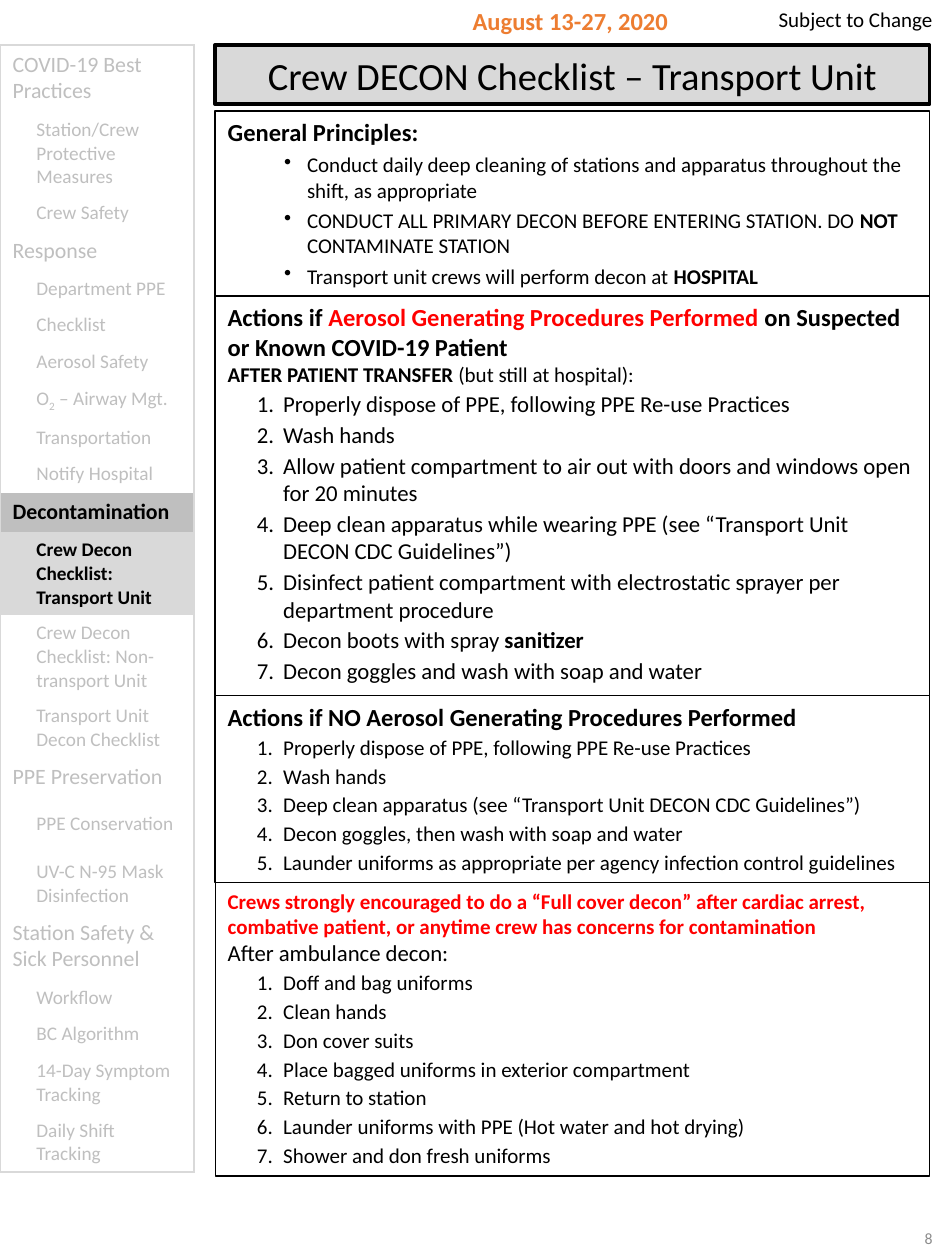
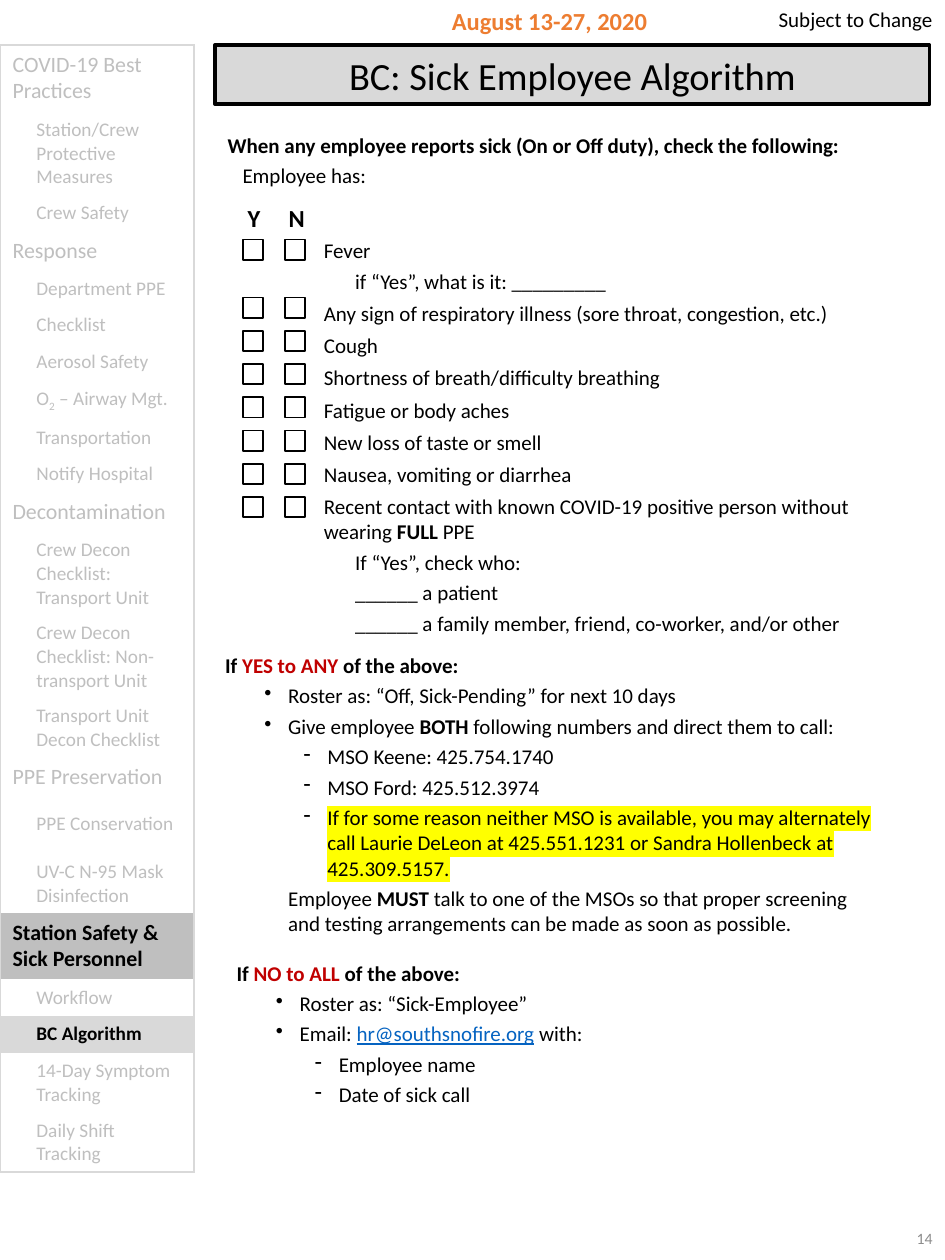
import dataclasses

import lxml.etree
import pptx
import pptx.dml.color
import pptx.enum.shapes
import pptx.enum.text
import pptx.oxml.ns
import pptx.util
from pptx.util import Cm

ALIGN = pptx.enum.text.PP_ALIGN
ANCHOR = pptx.enum.text.MSO_ANCHOR
qn = pptx.oxml.ns.qn

# Shared look
FONT = "Calibri"
BLACK, ORANGE, PAGE_GREY = "000000", "ED7D31", "8C8C8C"
MUTED, SECTION_FILL, TOPIC_FILL = "BFBFBF", "BFBFBF", "D9D9D9"
RED, DARK_RED, LINK_BLUE, YELLOW = "FF0000", "C00000", "0563C1", "FFFF00"
NO_TABLE_STYLE = "{2D5ABB26-0587-4C30-8999-92F81FD0307C}"
MAIN_LEFT, MAIN_WIDTH = 4.34, 14.4

STYLES = {
    "plain": {},
    "bold": {"bold": True},
    "alert": {"bold": True, "color": RED},
    "answer": {"bold": True, "color": DARK_RED},
    "link": {"color": LINK_BLUE, "underline": True},
    "marked": {"highlight": YELLOW},
    "sub": {"baseline": "-25000"},
}

# Side menu: kind, text, row height in cm
MENU = [
    ("section", "COVID-19 Best Practices", 1.34),
    ("topic", "Station/Crew Protective Measures", 1.67),
    ("topic", "Crew Safety", 0.74),
    ("section", "Response", 0.79),
    ("topic", "Department PPE", 0.74),
    ("topic", "Checklist", 0.74),
    ("topic", "Aerosol Safety", 0.74),
    ("topic", ["O", ("2", "sub"), " – Airway Mgt."], 0.74),
    ("topic", "Transportation", 0.74),
    ("topic", "Notify Hospital", 0.74),
    ("section", "Decontamination", 0.79),
    ("topic", "Crew Decon Checklist: Transport Unit", 1.67),
    ("topic", "Crew Decon Checklist: Non-transport Unit", 1.67),
    ("topic", "Transport Unit Decon Checklist", 1.2),
    ("section", "PPE Preservation", 0.97),
    ("topic", "PPE Conservation", 0.97),
    ("topic", "UV-C N-95 Mask Disinfection", 1.2),
    ("section", "Station Safety & Sick Personnel", 1.34),
    ("topic", "Workflow", 0.74),
    ("topic", "BC Algorithm", 0.74),
    ("topic", "14-Day Symptom Tracking", 1.2),
    ("topic", "Daily Shift Tracking", 1.2),
]


@dataclasses.dataclass
class Line:
    """One paragraph; spans are strings or (text, style) pairs."""
    spans: object
    size: float = 12
    left: float = 0
    hang: float = 0
    before: float = 0
    bullet: str = ""
    color: str = BLACK
    bold: bool = False
    align: object = ALIGN.LEFT


def heading(spans, size=14):
    return Line(spans, size, bold=True)


def numbered(items, size=12):
    return [Line(item, size, 1.12, 0.53, 2, "1.") for item in items]


def dotted(items, left=1.27, hang=0.48):
    return [Line(item, 12, left, hang, 3, "•") for item in items]


def dashed(items):
    return [Line(item, 12, 2.06, 0.48, 3, "-") for item in items]


def indented(items, left, before=3):
    return [Line(item, 12, left, 0, before) for item in items]


def rgb(color):
    return pptx.dml.color.RGBColor.from_string(color)


# Text
def format_span(span, line, style):
    font = span.font
    font.name, font.size = FONT, pptx.util.Pt(line.size)
    font.bold = style.get("bold", line.bold)
    font.color.rgb = rgb(style.get("color", line.color))
    if "underline" in style:
        font.underline = True
    properties = span._r.get_or_add_rPr()
    if "baseline" in style:
        properties.set("baseline", style["baseline"])
    if "highlight" in style:
        highlight = lxml.etree.Element(qn("a:highlight"))
        lxml.etree.SubElement(highlight, qn("a:srgbClr"), val=style["highlight"])
        properties.find(qn("a:solidFill")).addnext(highlight)


def write_lines(frame, lines):
    frame.word_wrap = True
    for index, line in enumerate(lines):
        para = frame.add_paragraph() if index else frame.paragraphs[0]
        para.alignment = line.align
        para.space_before = pptx.util.Pt(line.before)
        properties = para._p.get_or_add_pPr()
        properties.set("marL", str(Cm(line.left)))
        properties.set("indent", str(-Cm(line.hang)))
        if line.bullet == "1.":
            lxml.etree.SubElement(properties, qn("a:buAutoNum"), type="arabicPeriod")
        elif line.bullet:
            lxml.etree.SubElement(properties, qn("a:buChar"), char=line.bullet)
        spans = [line.spans] if isinstance(line.spans, str) else line.spans
        for part in spans:
            text, style = (part, "plain") if isinstance(part, str) else part
            span = para.add_run()
            span.text = text
            format_span(span, line, STYLES[style])


def add_text(page, left, top, width, height, lines, anchor=ANCHOR.TOP):
    box = page.shapes.add_textbox(Cm(left), Cm(top), Cm(width), Cm(height))
    box.text_frame.vertical_anchor = anchor
    write_lines(box.text_frame, lines)


# Shapes
def add_frame(page, left, top, width, height, line_width, lines=(), fill=None):
    box = page.shapes.add_shape(pptx.enum.shapes.MSO_SHAPE.RECTANGLE,
                                Cm(left), Cm(top), Cm(width), Cm(height))
    box.shadow.inherit = False
    if fill:
        box.fill.solid()
        box.fill.fore_color.rgb = rgb(fill)
    else:
        box.fill.background()
    box.line.color.rgb = rgb(BLACK)
    box.line.width = pptx.util.Pt(line_width)
    box.text_frame.vertical_anchor = ANCHOR.MIDDLE if fill else ANCHOR.TOP
    write_lines(box.text_frame, lines)


# Side menu
def add_border(cell, side):
    border = lxml.etree.SubElement(cell._tc.get_or_add_tcPr(), qn("a:ln" + side), w="12700")
    fill = lxml.etree.SubElement(border, qn("a:solidFill"))
    lxml.etree.SubElement(fill, qn("a:srgbClr"), val=TOPIC_FILL)


def add_menu(page, current):
    total = sum(height for _, _, height in MENU)
    table = page.shapes.add_table(len(MENU), 1, Cm(0), Cm(0.91), Cm(3.91), Cm(total)).table
    table.first_row = table.horz_banding = False
    table._tbl.tblPr.find(qn("a:tableStyleId")).text = NO_TABLE_STYLE
    for index, (kind, text, height) in enumerate(MENU):
        table.rows[index].height = Cm(height)
        cell = table.cell(index, 0)
        sides = ["L", "R"]
        if index == 0:
            sides.append("T")
        if index == len(MENU) - 1:
            sides.append("B")
        for side in sides:
            add_border(cell, side)
        is_section, active = kind == "section", text in current
        if active:
            cell.fill.solid()
            cell.fill.fore_color.rgb = rgb(SECTION_FILL if is_section else TOPIC_FILL)
        else:
            cell.fill.background()
        write_lines(cell.text_frame, [Line(
            text, 12.5 if is_section else 11, 0 if is_section else 0.48,
            color=BLACK if active else MUTED, bold=active)])


def add_page(deck, title, number, current, date_left):
    page = deck.slides.add_slide(deck.slide_layouts[6])
    add_text(page, date_left, 0, 6.5, 0.84,
             [Line("August 13-27, 2020", 14, color=ORANGE, bold=True, align=ALIGN.CENTER)])
    add_text(page, 14.76, 0, 4.29, 0.76, [Line("Subject to Change", align=ALIGN.RIGHT)])
    add_text(page, 14.76, 24.28, 4.29, 1.35,
             [Line(number, 9, color=PAGE_GREY, align=ALIGN.RIGHT)], ANCHOR.MIDDLE)
    add_menu(page, current)
    add_frame(page, MAIN_LEFT, 0.91, MAIN_WIDTH, 1.19, 2.25,
              [Line(title, 22, align=ALIGN.CENTER)], TOPIC_FILL)
    return page


# Slide: decontamination checklist
def build_checklist(deck):
    page = add_page(deck, "Crew DECON Checklist – Transport Unit", "8",
                    ("Decontamination", "Crew Decon Checklist: Transport Unit"), 8.25)
    principles = [heading("General Principles:")] + dotted([
        "Conduct daily deep cleaning of stations and apparatus throughout the shift, as appropriate",
        ["CONDUCT ALL PRIMARY DECON BEFORE ENTERING STATION. DO ", ("NOT", "bold"),
         " CONTAMINATE STATION"],
        ["Transport unit crews will perform decon at ", ("HOSPITAL", "bold")],
    ], 1.6, 0.46)
    aerosol = [
        heading(["Actions if ", ("Aerosol Generating Procedures Performed ", "alert"),
                 "on Suspected or Known COVID-19 Patient"]),
        Line([("AFTER PATIENT TRANSFER ", "bold"), "(but still at hospital):"]),
    ] + numbered([
        "Properly dispose of PPE, following PPE Re-use Practices",
        "Wash hands",
        "Allow patient compartment to air out with doors and windows open for 20 minutes",
        "Deep clean apparatus while wearing PPE (see “Transport Unit DECON CDC Guidelines”)",
        "Disinfect patient compartment with electrostatic sprayer per department procedure",
        ["Decon boots with spray ", ("sanitizer", "bold")],
        "Decon goggles and wash with soap and water",
    ], 13)
    no_aerosol = [heading("Actions if NO Aerosol Generating Procedures Performed")] + numbered([
        "Properly dispose of PPE, following PPE Re-use Practices",
        "Wash hands",
        "Deep clean apparatus (see “Transport Unit DECON CDC Guidelines”)",
        "Decon goggles, then wash with soap and water",
        "Launder uniforms as appropriate per agency infection control guidelines",
    ])
    full_decon = [
        Line([("Crews strongly encouraged to do a “Full cover decon” after cardiac arrest, "
               "combative patient, or anytime crew has concerns for contamination", "alert")]),
        Line("After ambulance decon:", 13),
    ] + numbered([
        "Doff and bag uniforms",
        "Clean hands",
        "Don cover suits",
        "Place bagged uniforms in exterior compartment",
        "Return to station",
        "Launder uniforms with PPE (Hot water and hot drying)",
        "Shower and don fresh uniforms",
    ])
    top = 2.24
    for height, line_width, lines in [(3.73, 1, principles), (8.05, 1, aerosol),
                                      (3.77, 1, no_aerosol), (5.92, 0.75, full_decon)]:
        add_frame(page, MAIN_LEFT, top, MAIN_WIDTH, height, line_width, lines)
        top += height


# Slide: sick employee algorithm
def build_algorithm(deck):
    page = add_page(deck, "BC: Sick Employee Algorithm", "14",
                    ("Station Safety & Sick Personnel", "BC Algorithm"), 7.83)
    add_text(page, MAIN_LEFT, 2.54, 13.18, 1.4, [
        heading("When any employee reports sick (On or Off duty), check the following:", 12),
        *indented(["Employee has:"], 0.3)])

    symptoms = [
        Line("Fever", left=0.97),
        *indented(["if “Yes”, what is it: _________"], 1.6),
        *indented([
            "Any sign of respiratory illness (sore throat, congestion, etc.)",
            "Cough",
            "Shortness of breath/difficulty breathing",
            "Fatigue or body aches",
            "New loss of taste or smell",
            "Nausea, vomiting or diarrhea",
            ["Recent contact with known COVID-19 positive person without wearing ",
             ("FULL ", "bold"), "PPE"],
        ], 0.97, 4),
        *indented(["If “Yes”, check who:", "______ a patient",
                   "______ a family member, friend, co-worker, and/or other"], 1.6),
    ]
    add_text(page, 5.31, 4.67, 13.44, 8.36, symptoms)

    # Yes and no check boxes
    box_tops = [4.83] + [6 + 0.67 * row for row in range(7)]
    for letter, letter_left, box_left in [("Y", 4.65, 4.9), ("N", 5.51, 5.74)]:
        add_text(page, letter_left, 3.97, 0.94, 0.86,
                 [Line(letter, 14, bold=True, align=ALIGN.CENTER)])
        for box_top in box_tops:
            add_frame(page, box_left, box_top, 0.41, 0.41, 1)

    add_text(page, 4.29, 13.03, 13.61, 6.65, [
        heading(["If ", ("YES to ANY ", "answer"), "of the above:"], 12),
        *dotted(["Roster as: “Off, Sick-Pending” for next 10 days",
                 ["Give employee ", ("BOTH", "bold"),
                  " following numbers and direct them to call:"]]),
        *dashed(["MSO Keene: 425.754.1740", "MSO Ford: 425.512.3974",
                 [("If for some reason neither MSO is available, you may alternately call Laurie "
                   "DeLeon at 425.551.1231 or Sandra Hollenbeck at 425.309.5157.", "marked")]]),
        *indented([["Employee ", ("MUST", "bold"),
                    " talk to one of the MSOs so that proper screening and testing "
                    "arrangements can be made as soon as possible."]], 1.27)])
    add_text(page, 4.52, 19.23, 13.18, 3.76, [
        heading(["If ", ("NO to ALL ", "answer"), "of the above:"], 12),
        *dotted(["Roster as: “Sick-Employee”",
                 ["Email: ", ("hr@southsnofire.org", "link"), " with:"]]),
        *dashed(["Employee name", "Date of sick call"])])


def main():
    deck = pptx.Presentation()
    deck.slide_width, deck.slide_height = Cm(19.05), Cm(25.4)
    build_checklist(deck)
    build_algorithm(deck)
    deck.save("out.pptx")


if __name__ == "__main__":
    main()
